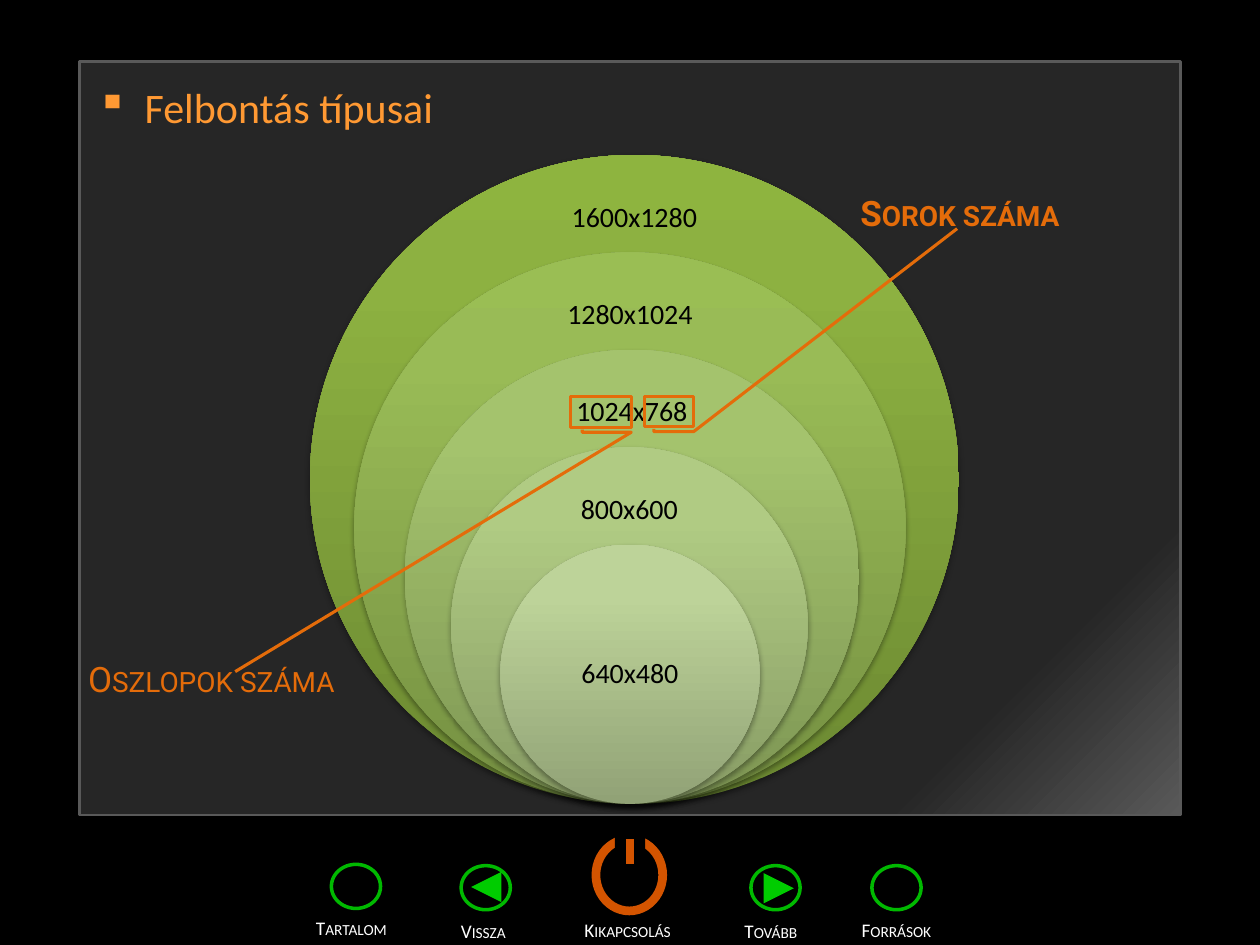
from dataclasses import dataclass

from lxml.etree import SubElement
from pptx import Presentation
from pptx.dml.color import RGBColor
from pptx.enum.shapes import MSO_CONNECTOR, MSO_SHAPE as Shape
from pptx.enum.text import MSO_ANCHOR as Anchor, PP_ALIGN as Align
from pptx.oxml import parse_xml
from pptx.oxml.ns import nsdecls, qn
from pptx.util import Inches, Pt

COLORS = {
    "black": "000000", "white": "FFFFFF", "panel": "262626", "edge": "595959",
    "power": "D35400", "ring": "00B900", "arrow": "00CC00",
    "title": "FF9933", "callout": "E46C0A",
}
# The page is a grid of 100 columns and 75 rows
COLS, ROWS = 100, 75
deck = Presentation()
deck.slide_width, deck.slide_height = Inches(10), Inches(7.5)
page = deck.slides.add_slide(deck.slide_layouts[6])


@dataclass
class Area:
    col: float
    row: float
    cols: float
    rows: float

    def emu(self) -> tuple:
        return (x(self.col), y(self.row), x(self.cols), y(self.rows))


@dataclass
class Style:
    size: float
    color: str
    font: str = "Calibri"
    bold: bool = False
    small_caps: bool = False


@dataclass
class Circle:
    label: str
    middle: float
    stops: list


@dataclass
class NavButton:
    label: str
    ring: Area
    text: Area
    arrow: Area | None = None
    turn: int = 0


@dataclass
class Callout:
    label: str
    frame: Area
    tail: tuple
    text: Area
    bold: bool


def x(cols: float) -> int:
    return int(deck.slide_width * cols / COLS)


def y(rows: float) -> int:
    return int(deck.slide_height * rows / ROWS)


def rgb(name: str) -> RGBColor:
    return RGBColor.from_string(COLORS[name])


def add_box(kind, area: Area, fill: str = "", line: str = "", width: float = 0, turn: int = 0):
    box = page.shapes.add_shape(kind, *area.emu())
    box.shadow.inherit = False
    box.rotation = turn
    if fill:
        box.fill.solid()
        box.fill.fore_color.rgb = rgb(fill)
    else:
        box.fill.background()
    if line:
        box.line.color.rgb = rgb(line)
        box.line.width = Pt(width)
    else:
        box.line.fill.background()
    return box


def set_gradient(box, stops: list, angle: int) -> None:
    marks = "".join(f'<a:gs pos="{pos * 1000}"><a:srgbClr val="{color}"/></a:gs>'
                    for pos, color in stops)
    gradient = parse_xml(f'<a:gradFill {nsdecls("a")} rotWithShape="1"><a:gsLst>{marks}</a:gsLst>'
                         f'<a:lin ang="{angle * 60000}" scaled="0"/></a:gradFill>')
    props = box._element.spPr
    props.replace(props.find(qn("a:noFill")), gradient)


def set_shadow(box) -> None:
    effects = box._element.spPr.find(qn("a:effectLst"))
    shadow = SubElement(effects, qn("a:outerShdw"), blurRad=str(Pt(3.1)), dist=str(Pt(1.8)),
                        dir="5400000", rotWithShape="0")
    color = SubElement(shadow, qn("a:srgbClr"), val=COLORS["black"])
    SubElement(color, qn("a:alpha"), val="35000")


def add_text(text: str, area: Area, style: Style, align=Align.LEFT, wrap: bool = True):
    frame = page.shapes.add_textbox(*area.emu()).text_frame
    frame.text = text
    frame.word_wrap = wrap
    para = frame.paragraphs[0]
    para.alignment = align
    font = para.runs[0].font
    font.name, font.size, font.bold = style.font, Pt(style.size), style.bold
    font.color.rgb = rgb(style.color)
    if style.small_caps:
        para.runs[0]._r.get_or_add_rPr().set("cap", "small")
    return frame


def draw_circle(circle: Circle, top: float, size: float, label_drop: float) -> None:
    box = add_box(Shape.OVAL, Area(circle.middle - size / 2, top, size, size))
    set_gradient(box, list(zip((0, 80, 100), circle.stops)), 270)
    set_shadow(box)
    area = Area(circle.middle - 9.5, top + label_drop - 2.6, 19, 5.2)
    frame = add_text(circle.label, area, Style(16, "black"), Align.CENTER)
    frame.vertical_anchor = Anchor.MIDDLE
    frame.paragraphs[0].line_spacing = 0.9


def draw_button(button: NavButton) -> None:
    add_box(Shape.OVAL, button.ring, line="ring", width=2)
    if button.arrow:
        add_box(Shape.FLOWCHART_EXTRACT, button.arrow, "arrow", turn=button.turn)
    add_text(button.label, button.text, NAV_STYLE, wrap=False)


def draw_callout(callout: Callout) -> None:
    box = add_box(Shape.LINE_CALLOUT_3, callout.frame, line="callout", width=1.75, turn=270)
    for index, value in enumerate((0.19, -0.08, 0.19, -0.17, 1, -0.17, *callout.tail)):
        box.adjustments[index] = value
    style = Style(20, "callout", "Roboto", callout.bold, True)
    add_text(callout.label, callout.text, style)


# Background and panel
page.background.fill.solid()
page.background.fill.fore_color.rgb = rgb("black")
panel = add_box(Shape.RECTANGLE, Area(6.3, 4.9, 87.4, 59.8), line="edge", width=1.5)
set_gradient(panel, [(84, COLORS["panel"]), (100, COLORS["edge"])], 45)

# Power button
NAV_STYLE = Style(11, "white", small_caps=True)
add_box(Shape.OVAL, Area(47.3, 66.6, 5.3, 5.7), line="power", width=5)
add_box(Shape.RECTANGLE, Area(48.8, 65.7, 2.4, 1.8), "black")
bar = page.shapes.add_connector(MSO_CONNECTOR.STRAIGHT, x(50), y(66.6), x(50), y(68.6))
bar.line.color.rgb, bar.line.width = rgb("power"), Pt(5)
SubElement(bar._element.spPr, qn("a:effectLst"))
add_text("Kikapcsolás", Area(45.4, 72.4, 9.8, 2.9), NAV_STYLE, wrap=False)

# Navigation buttons
for nav_button in (
    NavButton("Tartalom", Area(26.3, 68.6, 3.9, 3.5), Area(24.1, 72.2, 8.3, 2.9)),
    NavButton("Vissza", Area(36.6, 68.7, 3.9, 3.5), Area(35.6, 72.5, 5.9, 2.9),
              Area(37.4, 69.2, 2.4, 2.4), 270),
    NavButton("Tovább", Area(59.6, 68.7, 3.9, 3.5), Area(58.1, 72.5, 6.9, 2.9),
              Area(60.6, 69.3, 2.4, 2.4), 90),
    NavButton("Források", Area(69.2, 68.7, 3.9, 3.5), Area(67.4, 72.4, 7.6, 2.9)),
):
    draw_button(nav_button)

# Bulleted title
title = add_text("Felbontás típusai", Area(6.7, 6, 87, 6), Style(24, "title")).paragraphs[0]
title.space_before = Pt(4.8)
title_props = title._p.get_or_add_pPr()
title_props.set("marL", str(Inches(0.38)))
title_props.set("indent", str(-Inches(0.38)))
SubElement(title_props, qn("a:buChar"), char="▪")

# Nested circles, all resting on the same bottom row
BOTTOM, LARGEST, STEP = 63.8, 51.5, 7.73
circles = [
    Circle("1600x1280", 50.35, ["6C8932", "8DB141", "8EB43F"]),
    Circle("1280x1024", 50, ["759042", "99BB56", "9ABE54"]),
    Circle("1024x768", 50.15, ["7E9654", "A4C36D", "A5C56B"]),
    Circle("800x600", 49.95, ["889C65", "B0CB83", "B1CD82"]),
    Circle("640x480", 50, ["91A276", "BDD399", "BED599"]),
]
for order, circle in enumerate(circles):
    size = LARGEST - order * STEP
    innermost = circle is circles[-1]
    draw_circle(circle, BOTTOM - size, size, size / 2 if innermost else 5)

# Callouts for the two halves of a resolution
for callout in (
    Callout("Oszlopok száma", Area(46.5, 30.3, 2.4, 4.8), (-5.55, -8.08),
            Area(6, 51.7, 26.8, 4.4), False),
    Callout("Sorok száma", Area(51.9, 30.7, 2.4, 3.9), (6.36, 6.54),
            Area(67.3, 14.7, 26, 4.4), True),
):
    draw_callout(callout)

deck.save("out.pptx")
